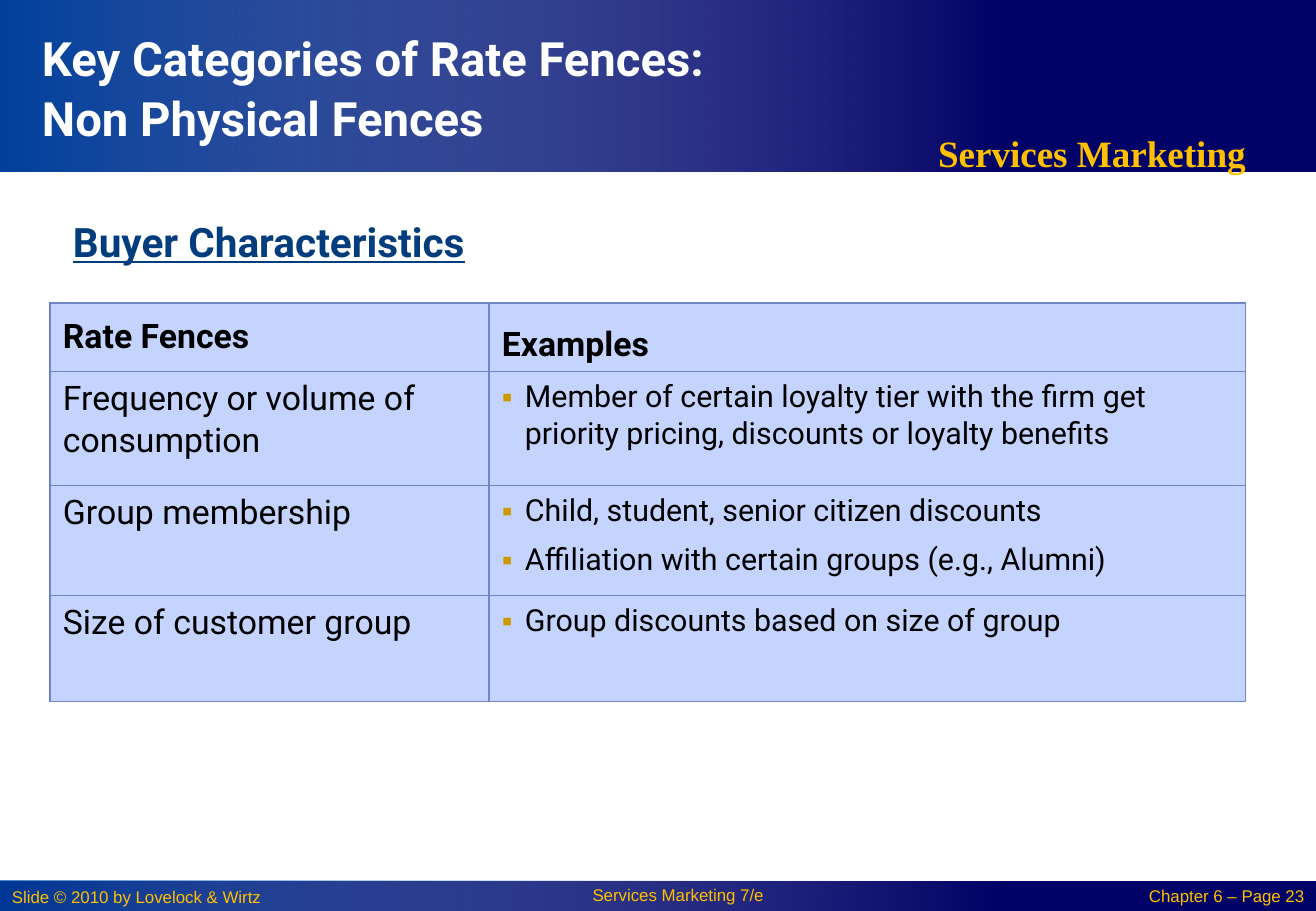
from lxml.etree import SubElement as Sub
from pptx import Presentation as Deck
from pptx.dml.color import RGBColor
from pptx.enum.shapes import MSO_SHAPE as Form
from pptx.enum.text import MSO_ANCHOR as Anchor, PP_ALIGN as Align
from pptx.oxml.ns import qn
from pptx.util import Pt

SCALE = 7526
GOLD, NAVY, BLUE, WHITE, BLACK = "FFC000", "000066", "0152AB", "FFFFFF", "000000"
CELL, EDGE, MARK = "C5D3FF", "6E86C6", "CC9900"


def px(num):
    return num * SCALE


def hue(code):
    return RGBColor.from_string(code)


class Page:
    def __init__(self, deck, face):
        self.slide = deck.slides.add_slide(deck.slide_layouts[6])
        self.shapes = self.slide.shapes
        self.face = face

    def style(self, para, size, tint, bold=False, face=None, space=1.0, align=Align.LEFT):
        para.alignment = align
        para.line_spacing = space
        font = para.font
        font.name = face or self.face
        font.size = Pt(size)
        font.bold = bold
        font.color.rgb = hue(tint)

    def rect(self, left, top, wide, high):
        shape = self.shapes.add_shape(Form.RECTANGLE, px(left), px(top), px(wide), px(high))
        shape.shadow.inherit = False
        shape.line.fill.background()
        return shape

    def band(self, top, high, alpha):
        base = self.rect(0, top, 1316, high)
        base.fill.solid()
        base.fill.fore_color.rgb = hue(NAVY)
        glow = self.rect(0, top, 1012, high)
        glow.fill.gradient()
        glow.fill.gradient_angle = 0
        for stop, tint in zip(glow.fill.gradient_stops, (BLUE, WHITE)):
            stop.color.rgb = hue(tint)
        colors = glow._element.spPr.iter(qn("a:srgbClr"))
        for color, part in zip(colors, (alpha, 0)):
            Sub(color, qn("a:alpha"), val=str(part * 1000))

    def text(self, words, left, top, wide, high, size, tint, anchor=Anchor.TOP, **look):
        frame = self.shapes.add_textbox(px(left), px(top), px(wide), px(high)).text_frame
        frame.word_wrap = True
        frame.vertical_anchor = anchor
        para = frame.paragraphs[0]
        para.text = words
        self.style(para, size, tint, **look)
        return para

    def bullet(self, para):
        props = para._p.get_or_add_pPr()
        props.set("marL", str(px(23)))
        props.set("indent", str(px(-23)))
        Sub(Sub(props, qn("a:buClr")), qn("a:srgbClr"), val=MARK)
        Sub(props, qn("a:buFont"), typeface="Arial")
        Sub(props, qn("a:buChar"), char="▪")

    def cell(self, cell, lines, size, bold=False, space=1.05, dots=False):
        cell.margin_left = cell.margin_right = px(13)
        cell.margin_top = cell.margin_bottom = px(6)
        frame = cell.text_frame
        for num, line in enumerate(lines):
            para = frame.add_paragraph() if num else frame.paragraphs[0]
            para.text = line
            if dots:
                self.bullet(para)
            if num:
                para.space_before = Pt(7)
            self.style(para, size, BLACK, bold=bold, space=space)
        props = cell._tc.get_or_add_tcPr()
        for side in ("lnL", "lnR", "lnT", "lnB"):
            edge = Sub(props, qn("a:" + side), w=str(Pt(0.75)))
            Sub(Sub(edge, qn("a:solidFill")), qn("a:srgbClr"), val=EDGE)
        cell.fill.solid()
        cell.fill.fore_color.rgb = hue(CELL)

    def table(self, left, top, cols, rows, heads, body):
        frame = self.shapes.add_table(len(rows), len(cols), px(left), px(top),
                                      px(sum(cols)), px(sum(rows)))
        grid = frame.table
        grid.first_row = grid.horz_banding = False
        for col, wide in zip(grid.columns, cols):
            col.width = px(wide)
        for row, high in zip(grid.rows, rows):
            row.height = px(high)
        for num, (head, space) in enumerate(heads):
            self.cell(grid.cell(0, num), [head], 20, bold=True, space=space)
        grid.cell(0, 0).vertical_anchor = Anchor.MIDDLE
        for num, (fence, cases) in enumerate(body, 1):
            self.cell(grid.cell(num, 0), [fence], 20)
            self.cell(grid.cell(num, 1), cases, 18, dots=True)


def main():
    deck = Deck()
    deck.slide_width, deck.slide_height = px(1316), px(911)
    page = Page(deck, "Roboto")
    page.band(881, 30, 69)
    page.band(0, 172, 80)
    page.text("Services Marketing", 851, 107, 482, 75, 22, GOLD, bold=True,
              face="Times New Roman", space=1.4, align=Align.CENTER)
    feet = [
        ("Slide © 2010 by Lovelock & Wirtz", 0, 881, 313, Align.LEFT, 1.0),
        ("Services Marketing 7/e", 516, 881, 324, Align.CENTER, 0.9),
        ("Chapter 6 – Page 23", 1103, 882, 213, Align.RIGHT, 0.9),
    ]
    for words, left, top, wide, align, space in feet:
        page.text(words, left, top, wide, 30, 10, GOLD, face="Arial", space=space, align=align)
    page.text("Key Categories of Rate Fences:\vNon Physical Fences", 30, 30, 851, 112, 28,
              WHITE, anchor=Anchor.MIDDLE, bold=True, space=1.05)
    page.table(
        50, 303, (439, 757), (65, 114, 110, 106),
        [("Rate Fences", 0.9), ("Examples", 1.4)],
        [
            ("Frequency or volume of consumption",
             ["Member of certain loyalty tier with the firm get priority pricing, "
              "discounts or loyalty benefits"]),
            ("Group membership",
             ["Child, student, senior citizen discounts",
              "Affiliation with certain groups (e.g., Alumni)"]),
            ("Size of customer group", ["Group discounts based on size of group"]),
        ])
    buyer = page.text("Buyer Characteristics", 61, 192, 617, 78, 24, "013C7D",
                      bold=True, space=1.4)
    buyer.font.underline = True
    deck.save("out.pptx")


if __name__ == "__main__":
    main()
